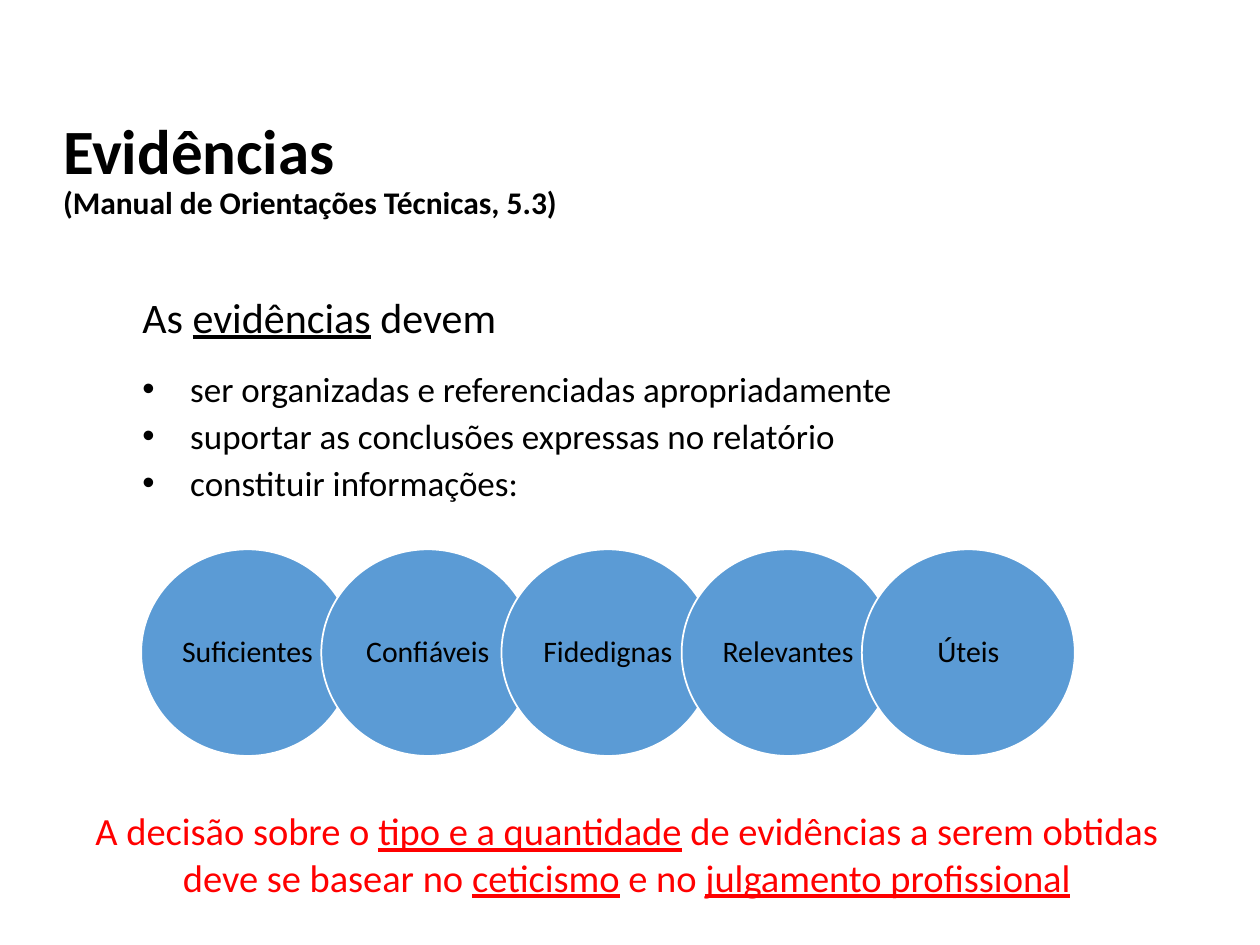
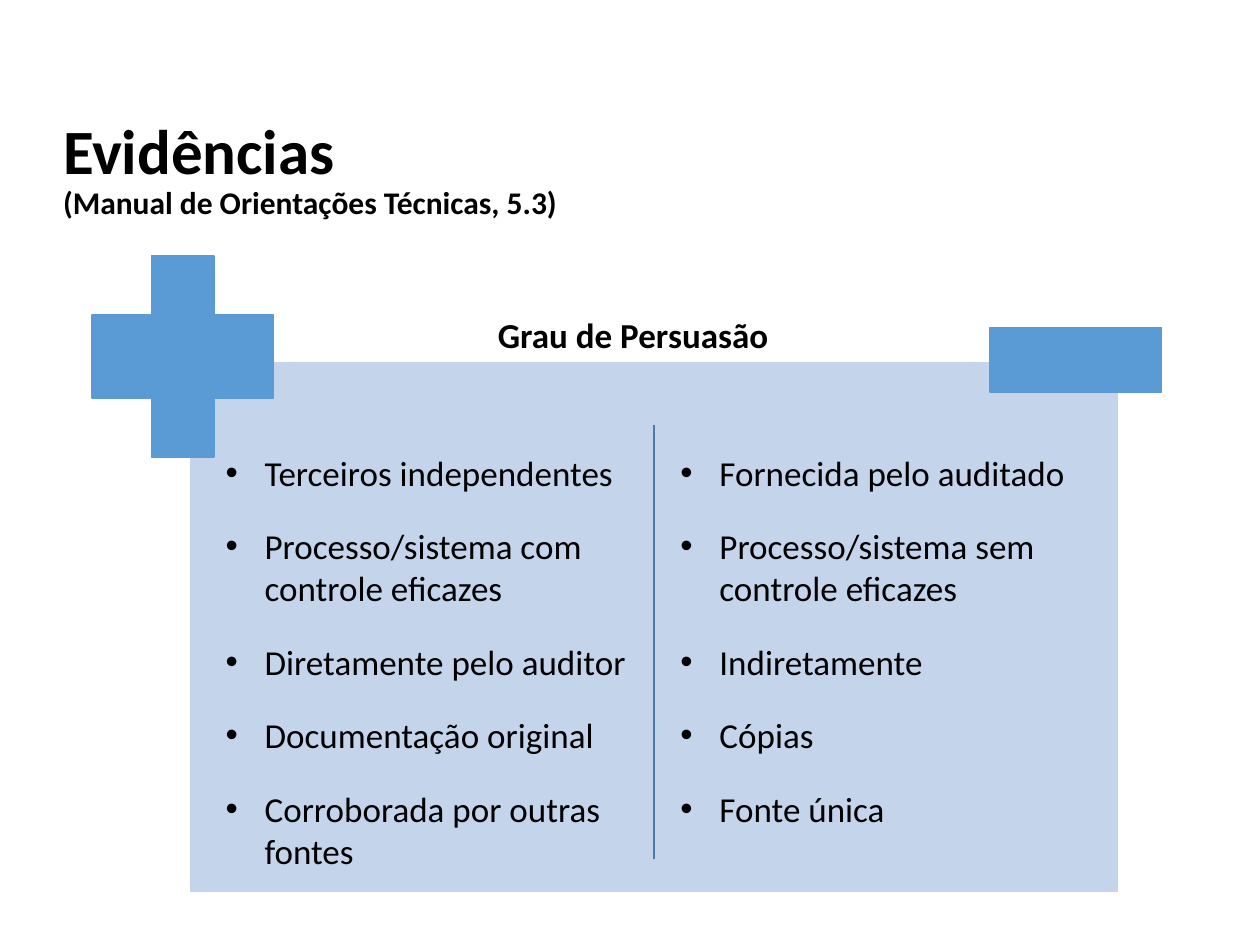
from typing import NamedTuple

from lxml import etree
from pptx import Presentation
from pptx.dml.color import RGBColor
from pptx.enum.shapes import MSO_CONNECTOR, MSO_SHAPE
from pptx.enum.text import MSO_ANCHOR, MSO_AUTO_SIZE, PP_ALIGN
from pptx.oxml.ns import qn
from pptx.util import Inches, Pt

FONT = "Calibri"
BLACK, WHITE, RED = "000000", "FFFFFF", "FF0000"
BLUE, PALE_BLUE, DIVIDER_BLUE = "5B9BD5", "C4D5EB", "497CAB"


class Box(NamedTuple):
    left: float
    top: float
    width: float
    height: float

    def lengths(self) -> list:
        return [Inches(v) for v in self]


class Span(NamedTuple):
    text: str
    underlined: bool = False


class BulletStyle(NamedTuple):
    indent: float
    space_after: float


class Block(NamedTuple):
    kind: MSO_SHAPE
    box: Box
    fill: str
    line: str


TITLE_BOX = Box(0.4, 0.9, 9.16, 1.05)
TITLE_LINES = [("Evidências", 36), ("(Manual de Orientações Técnicas, 5.3)", 18)]

INTRO = [Span("As "), Span("evidências", True), Span(" devem")]
DUTIES = [
    "ser organizadas e referenciadas apropriadamente",
    "suportar as conclusões expressas no relatório",
    "constituir informações:",
]
DUTY_STYLE = BulletStyle(0.38, 3)
QUALITIES = ["Suficientes", "Confiáveis", "Fidedignas", "Relevantes", "Úteis"]
CIRCLE = Box(1.12, 4.36, 1.69, 1.64)
CIRCLE_STEP = 1.43
DECISION = [
    Span("A decisão sobre o "),
    Span("tipo e a quantidade", True),
    Span(" de evidências a serem obtidas deve se basear no "),
    Span("ceticismo", True),
    Span(" e no "),
    Span("julgamento profissional", True),
]

BALANCE = [
    Block(MSO_SHAPE.RECTANGLE, Box(1.5, 2.87, 7.38, 4.22), PALE_BLUE, WHITE),
    Block(MSO_SHAPE.CROSS, Box(0.73, 2.03, 1.44, 1.6), BLUE, BLUE),
    Block(MSO_SHAPE.RECTANGLE, Box(7.86, 2.6, 1.36, 0.51), BLUE, BLUE),
]
PERSUASION_STYLE = BulletStyle(0.31, 18)
MORE_PERSUASIVE = [
    "Terceiros independentes",
    "Processo/sistema com controle eficazes",
    "Diretamente pelo auditor",
    "Documentação original",
    "Corroborada por outras fontes",
]
LESS_PERSUASIVE = [
    "Fornecida pelo auditado",
    "Processo/sistema sem controle eficazes",
    "Indiretamente",
    "Cópias",
    "Fonte única",
]


def rgb(color: str) -> RGBColor:
    return RGBColor.from_string(color)


def format_runs(p, size: float, color: str = BLACK, bold: bool = False) -> None:
    for r in p.runs:
        r.font.name = FONT
        r.font.size = Pt(size)
        r.font.bold = bold
        r.font.color.rgb = rgb(color)


def add_spans(p, spans: list[Span], size: float, color: str = BLACK) -> None:
    for span in spans:
        r = p.add_run()
        r.text = span.text
        r.font.underline = span.underlined
    format_runs(p, size, color)


def set_bullet(p, indent: float = 0) -> None:
    """Hang a bullet in the indent, or remove the bullet when there is none."""
    pPr = p._p.get_or_add_pPr()
    pPr.set("marL", str(Inches(indent)))
    pPr.set("indent", str(-Inches(indent)))
    if indent:
        etree.SubElement(pPr, qn("a:buChar"), char="•")
    else:
        etree.SubElement(pPr, qn("a:buNone"))


def place(sp, box: Box) -> None:
    sp.left, sp.top, sp.width, sp.height = box.lengths()
    sp.text_frame.auto_size = MSO_AUTO_SIZE.NONE
    sp.text_frame.vertical_anchor = MSO_ANCHOR.TOP


def add_slide(prs, layout: int):
    """Add a slide with the shared two-line title."""
    s = prs.slides.add_slide(prs.slide_layouts[layout])
    title = s.shapes.title
    place(title, TITLE_BOX)
    tf = title.text_frame
    tf.text = "\n".join(text for text, _ in TITLE_LINES)
    for p, (_, size) in zip(tf.paragraphs, TITLE_LINES):
        p.alignment = PP_ALIGN.LEFT
        p.line_spacing = 0.9
        format_runs(p, size, bold=True)
    return s


def fill_list(sp, box: Box, items: list[str], style: BulletStyle,
              intro: list[Span] | None = None) -> None:
    place(sp, box)
    tf = sp.text_frame
    tf.text = "\n".join(([""] if intro else []) + items)
    for p in tf.paragraphs:
        p.space_before = Pt(0)
        p.space_after = Pt(style.space_after)
        if p.text:
            set_bullet(p, style.indent)
            format_runs(p, 20)
        else:
            set_bullet(p)
            p.space_after = Pt(14.6)
            add_spans(p, intro, 24)


def add_block(s, block: Block):
    sp = s.shapes.add_shape(block.kind, *block.box.lengths())
    sp.shadow.inherit = False
    sp.fill.solid()
    sp.fill.fore_color.rgb = rgb(block.fill)
    sp.line.color.rgb = rgb(block.line)
    sp.line.width = Pt(1)
    if block.kind == MSO_SHAPE.CROSS:
        sp.adjustments[0] = 0.328
    return sp


def add_circle(s, label: str, box: Box) -> None:
    sp = add_block(s, Block(MSO_SHAPE.OVAL, box, BLUE, WHITE))
    tf = sp.text_frame
    tf.text = label
    tf.word_wrap = False
    tf.vertical_anchor = MSO_ANCHOR.MIDDLE
    p = tf.paragraphs[0]
    p.alignment = PP_ALIGN.CENTER
    p.line_spacing = 0.9
    format_runs(p, 17)


def add_centred_text(s, box: Box):
    """Add a wrapping text box and return its centred paragraph."""
    tf = s.shapes.add_textbox(*box.lengths()).text_frame
    tf.word_wrap = True
    p = tf.paragraphs[0]
    p.alignment = PP_ALIGN.CENTER
    return p


def add_divider(s, x: float, top: float, bottom: float) -> None:
    line = s.shapes.add_connector(
        MSO_CONNECTOR.STRAIGHT, Inches(x), Inches(top), Inches(x), Inches(bottom))
    line.line.color.rgb = rgb(DIVIDER_BLUE)
    line.line.width = Pt(1)
    etree.SubElement(line._element.spPr, qn("a:effectLst"))


def build_requirements(prs) -> None:
    s = add_slide(prs, 1)
    fill_list(s.placeholders[1], Box(1.03, 2.26, 8.16, 2.2), DUTIES, DUTY_STYLE, INTRO)
    for i, quality in enumerate(QUALITIES):
        add_circle(s, quality, CIRCLE._replace(left=CIRCLE.left + i * CIRCLE_STEP))
    p = add_centred_text(s, Box(0.44, 6.36, 9.07, 0.84))
    add_spans(p, DECISION, 22, RED)


def build_persuasion(prs) -> None:
    s = add_slide(prs, 3)
    for block in BALANCE:
        add_block(s, block)
    add_divider(s, 5.19, 3.37, 6.82)
    columns = [(1, 1.69, MORE_PERSUASIVE), (2, 5.3, LESS_PERSUASIVE)]
    for index, left, items in columns:
        sp = s.placeholders[index]
        fill_list(sp, Box(left, 3.53, 3.45, 3.47), items, PERSUASION_STYLE)
        s.shapes._spTree.append(sp._element)  # in front of the panel
    p = add_centred_text(s, Box(2.68, 2.44, 4.69, 0.44))
    p.text = "Grau de Persuasão"
    format_runs(p, 20, bold=True)


def main() -> None:
    prs = Presentation()
    prs.slide_width, prs.slide_height = Inches(10), Inches(7.5)
    build_requirements(prs)
    build_persuasion(prs)
    prs.save("out.pptx")


if __name__ == "__main__":
    main()
